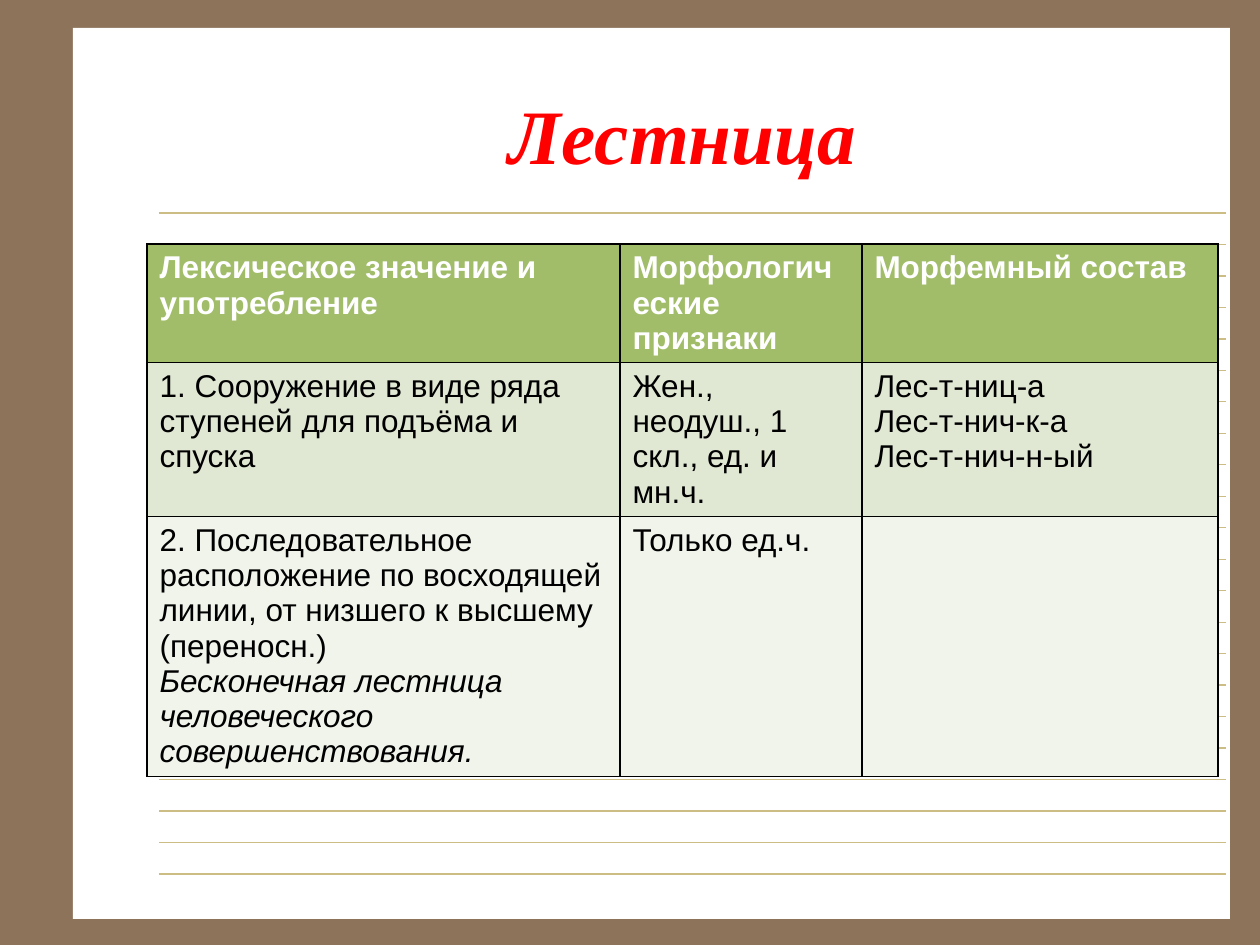
from dataclasses import dataclass

from lxml import etree
from pptx import Presentation
from pptx.dml.color import RGBColor
from pptx.enum.shapes import MSO_CONNECTOR, MSO_SHAPE
from pptx.enum.text import MSO_ANCHOR, PP_ALIGN
from pptx.oxml.ns import qn
from pptx.util import Emu, Pt

RECTANGLE = MSO_SHAPE.RECTANGLE
STRAIGHT = MSO_CONNECTOR.STRAIGHT
MIDDLE = MSO_ANCHOR.MIDDLE
CENTER = PP_ALIGN.CENTER
TITLE_ONLY = 5


@dataclass(frozen=True)
class Theme:
    """Colours, fonts and sizes of the slide."""

    frame: str = "8C735A"
    paper: str = "FFFFFF"
    rule: str = "CBBD83"
    title: str = "FF0000"
    header_text: str = "FFFFFF"
    body_text: str = "000000"
    border: str = "000000"
    row_fills: tuple = ("A1BD69", "E0E8D4", "F0F4EB")
    title_font: str = "Times New Roman"
    body_font: str = "Arial"
    title_size: int = 44
    body_size: int = 18
    rule_width: float = 0.75
    border_width: int = 1


THEME = Theme()
COLUMN_WIDTHS = (473, 242, 356)
ROW_HEIGHTS = (118, 154, 260)
RULE_COUNT = 22
ITALIC_PARAGRAPH = "Бесконечная лестница человеческого совершенствования."
ROWS = (
    (
        ("Лексическое значение и употребление",),
        ("Морфологические признаки",),
        ("Морфемный состав",),
    ),
    (
        ("1. Сооружение в виде ряда ступеней для подъёма и спуска",),
        ("Жен., неодуш., 1 скл., ед. и мн.ч.",),
        ("Лес-т-ниц-а", "Лес-т-нич-к-а", "Лес-т-нич-н-ый"),
    ),
    (
        (
            "2. Последовательное расположение по восходящей линии, "
            "от низшего к высшему (переносн.)",
            ITALIC_PARAGRAPH,
        ),
        ("Только ед.ч.",),
        (),
    ),
)


def px(length):
    """Turn pixels into EMU."""
    return Emu(round(length * 914400 / 126))


def rgb(color):
    """Turn a hex string into a colour."""
    return RGBColor.from_string(color)


def add_run(p, text, font, size, color, bold=False, italic=False):
    """Add one formatted run to a paragraph."""
    r = p.add_run()
    r.text = text
    r.font.name = font
    r.font.size = Pt(size)
    r.font.color.rgb = rgb(color)
    r.font.bold = bold
    r.font.italic = italic


def add_paper(s, left, top, width, height):
    """Draw the white sheet."""
    sp = s.shapes.add_shape(RECTANGLE, px(left), px(top), px(width), px(height))
    sp.shadow.inherit = False
    sp.fill.solid()
    sp.fill.fore_color.rgb = rgb(THEME.paper)
    sp.line.fill.background()


def add_rules(s, left, top, width, height):
    """Draw evenly spaced ruled lines across the box."""
    for i in range(RULE_COUNT):
        y = px(top + height * i / (RULE_COUNT - 1))
        line = s.shapes.add_connector(STRAIGHT, px(left), y, px(left + width), y)
        line.line.color.rgb = rgb(THEME.rule)
        line.line.width = Pt(THEME.rule_width)
        etree.SubElement(line._element.spPr, qn("a:effectLst"))


def place_title(s, text, left, top, width, height):
    """Place the title placeholder above the paper and fill it."""
    sp = s.shapes.title
    sp.element.getparent().append(sp.element)
    sp.left, sp.top, sp.width, sp.height = map(px, (left, top, width, height))
    tf = sp.text_frame
    tf.vertical_anchor = MIDDLE
    p = tf.paragraphs[0]
    p.alignment = CENTER
    add_run(p, text, THEME.title_font, THEME.title_size, THEME.title, True, True)


def add_borders(cell):
    """Outline the four sides of a cell."""
    tc_pr = cell._tc.get_or_add_tcPr()
    for side in ("a:lnL", "a:lnR", "a:lnT", "a:lnB"):
        ln = etree.SubElement(tc_pr, qn(side), w=str(Pt(THEME.border_width)))
        fill = etree.SubElement(ln, qn("a:solidFill"))
        etree.SubElement(fill, qn("a:srgbClr"), val=THEME.border)


def fill_cell(cell, paragraphs, fill, header):
    """Format a cell and write its paragraphs."""
    add_borders(cell)
    cell.fill.solid()
    cell.fill.fore_color.rgb = rgb(fill)
    color = THEME.header_text if header else THEME.body_text
    tf = cell.text_frame
    for i, text in enumerate(paragraphs):
        p = tf.add_paragraph() if i else tf.paragraphs[0]
        add_run(p, text, THEME.body_font, THEME.body_size, color,
                header, text == ITALIC_PARAGRAPH)


def add_word_table(s, left, top):
    """Add the table describing the word."""
    table = s.shapes.add_table(
        len(ROWS), len(COLUMN_WIDTHS), px(left), px(top),
        px(sum(COLUMN_WIDTHS)), px(sum(ROW_HEIGHTS)),
    ).table
    for column, width in zip(table.columns, COLUMN_WIDTHS):
        column.width = px(width)
    for i, (row, height) in enumerate(zip(table.rows, ROW_HEIGHTS)):
        row.height = px(height)
        for cell, paragraphs in zip(row.cells, ROWS[i]):
            fill_cell(cell, paragraphs, THEME.row_fills[i], i == 0)


def main():
    """Build and save the slide."""
    prs = Presentation()
    prs.slide_width, prs.slide_height = px(1260), px(945)
    s = prs.slides.add_slide(prs.slide_layouts[TITLE_ONLY])
    s.background.fill.solid()
    s.background.fill.fore_color.rgb = rgb(THEME.frame)
    add_paper(s, 73, 28, 1157, 891)
    add_rules(s, 159, 213, 1067, 661)
    place_title(s, "Лестница", 147, 55, 1071, 158)
    add_word_table(s, 147, 244)
    prs.save("out.pptx")


if __name__ == "__main__":
    main()
